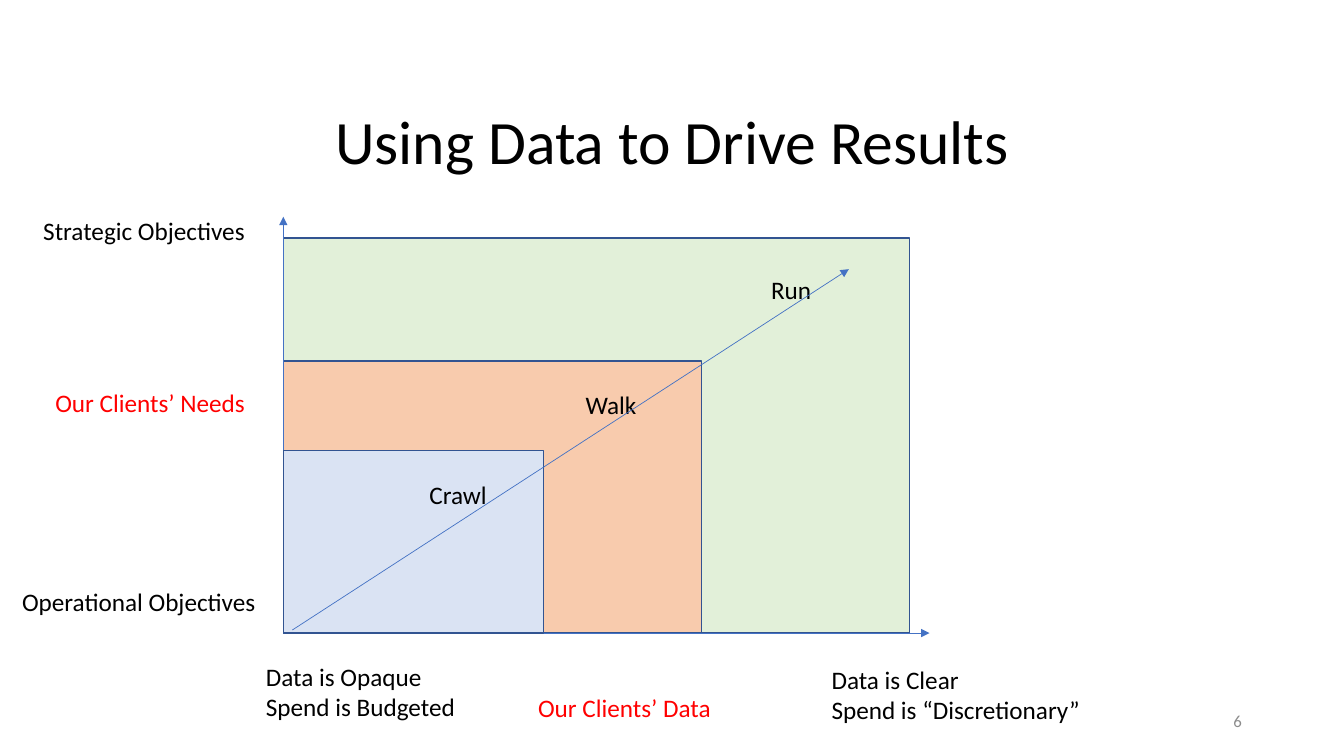
from typing import NamedTuple

from lxml.etree import SubElement
from pptx import Presentation
from pptx.dml.color import RGBColor
from pptx.enum.shapes import MSO_CONNECTOR, MSO_SHAPE
from pptx.enum.text import MSO_ANCHOR, PP_ALIGN
from pptx.oxml.ns import qn
from pptx.util import Inches, Pt

BLACK = RGBColor(0x00, 0x00, 0x00)
RED = RGBColor(0xFF, 0x00, 0x00)
GREY = RGBColor(0x8C, 0x8C, 0x8C)
GREEN = RGBColor(0xE2, 0xF0, 0xD9)
ORANGE = RGBColor(0xF8, 0xCB, 0xAD)
PALE_BLUE = RGBColor(0xDA, 0xE3, 0xF3)
BORDER = RGBColor(0x32, 0x54, 0x91)
ARROW = RGBColor(0x44, 0x72, 0xC4)

OUTER_STAGES = [(100, 100, GREEN), (66.83, 68.88, ORANGE)]
INNER_STAGES = [(41.55, 46.17, PALE_BLUE)]
AXES = [((0, 100), (103.22, 100)), ((0, 99.23), (0, -5.36))]
PATHWAY = [((1.45, 99.23), (90.34, 7.91))]
STAGE_NAMES = [
    ((21.74, 59.95, 14.17, 10.2), "Crawl", BLACK),
    ((46.7, 36.99, 14.17, 10.2), "Walk", BLACK),
    ((76.33, 7.91, 14.17, 10.2), "Run", BLACK),
]
AXIS_LABELS = [
    ((3.38, 50.53, 16, 5.33), "Our Clients’ Needs", RED),
    ((39.3, 90.93, 15.3, 5.33), "Our Clients’ Data", RED),
    ((2.48, 27.87, 16.8, 5.33), "Strategic Objectives", BLACK),
    ((0.9, 76.93, 19.58, 8.53), "Operational Objectives", BLACK),
    ((19.05, 86.8, 16.73, 9.47), "Data is Opaque\nSpend is Budgeted", BLACK),
    ((61.13, 87.2, 20.63, 9.47), "Data is Clear\nSpend is “Discretionary”", BLACK),
]


class Box(NamedTuple):
    """A rectangular region of the slide."""
    left: int
    top: int
    width: int
    height: int

    def point(self, x, y):
        """Return the position at percentages of this box."""
        return (round(self.left + self.width * x / 100),
                round(self.top + self.height * y / 100))

    def region(self, left, top, width, height):
        """Return a region given in percentages of this box."""
        return Box(*self.point(left, top), round(self.width * width / 100),
                   round(self.height * height / 100))


def write(shape, text, size, color, align):
    """Fill a shape with uniformly formatted paragraphs."""
    frame = shape.text_frame
    frame.word_wrap = True
    frame.text = text
    for paragraph in frame.paragraphs:
        paragraph.alignment = align
        paragraph.font.name = "Calibri"
        paragraph.font.size = Pt(size)
        paragraph.font.color.rgb = color
    return frame


def draw_title(slide, box):
    """Place the slide title in its placeholder."""
    title = slide.shapes.title
    title.left, title.top, title.width, title.height = box
    frame = write(title, "Using Data to Drive Results", 44, BLACK, PP_ALIGN.CENTER)
    frame.vertical_anchor = MSO_ANCHOR.MIDDLE
    frame.paragraphs[0].line_spacing = 0.9


def draw_stages(slide, box, stages):
    """Draw rectangles that share the lower left corner of the box."""
    for width, height, color in stages:
        stage = slide.shapes.add_shape(
            MSO_SHAPE.RECTANGLE, *box.region(0, 100 - height, width, height))
        stage.shadow.inherit = False
        stage.fill.solid()
        stage.fill.fore_color.rgb = color
        stage.line.color.rgb = BORDER
        stage.line.width = Pt(1)


def draw_arrows(slide, box, arrows):
    """Draw thin arrows between points of the box."""
    for start, end in arrows:
        arrow = slide.shapes.add_connector(
            MSO_CONNECTOR.STRAIGHT, *box.point(*start), *box.point(*end))
        arrow.line.color.rgb = ARROW
        arrow.line.width = Pt(0.5)
        properties = arrow.element.spPr
        SubElement(properties.find(qn("a:ln")), qn("a:tailEnd"), type="triangle")
        SubElement(properties, qn("a:effectLst"))


def draw_labels(slide, box, labels):
    """Write the labels at their places in the box."""
    for place, text, color in labels:
        label = slide.shapes.add_textbox(*box.region(*place))
        write(label, text, 18, color, PP_ALIGN.LEFT)


def draw_page_number(slide, box):
    """Write the page number at the right of the box."""
    number = slide.shapes.add_textbox(*box)
    frame = write(number, "6", 12, GREY, PP_ALIGN.RIGHT)
    frame.vertical_anchor = MSO_ANCHOR.MIDDLE


def main():
    """Build and save the presentation."""
    presentation = Presentation()
    presentation.slide_width = Inches(13.33)
    presentation.slide_height = Inches(7.5)
    slide = presentation.slides.add_slide(presentation.slide_layouts[5])
    page = Box(0, 0, presentation.slide_width, presentation.slide_height)
    plot = page.region(21.08, 31.47, 46.58, 52.27)

    draw_title(slide, page.region(6.9, 9.47, 86.25, 19.33))
    draw_stages(slide, plot, OUTER_STAGES)
    draw_arrows(slide, plot, AXES)
    draw_labels(slide, page, AXIS_LABELS)
    draw_stages(slide, plot, INNER_STAGES)
    draw_labels(slide, plot, STAGE_NAMES)
    draw_page_number(slide, page.region(70.65, 92.67, 22.5, 5.33))
    draw_arrows(slide, plot, PATHWAY)
    presentation.save("out.pptx")


if __name__ == "__main__":
    main()
